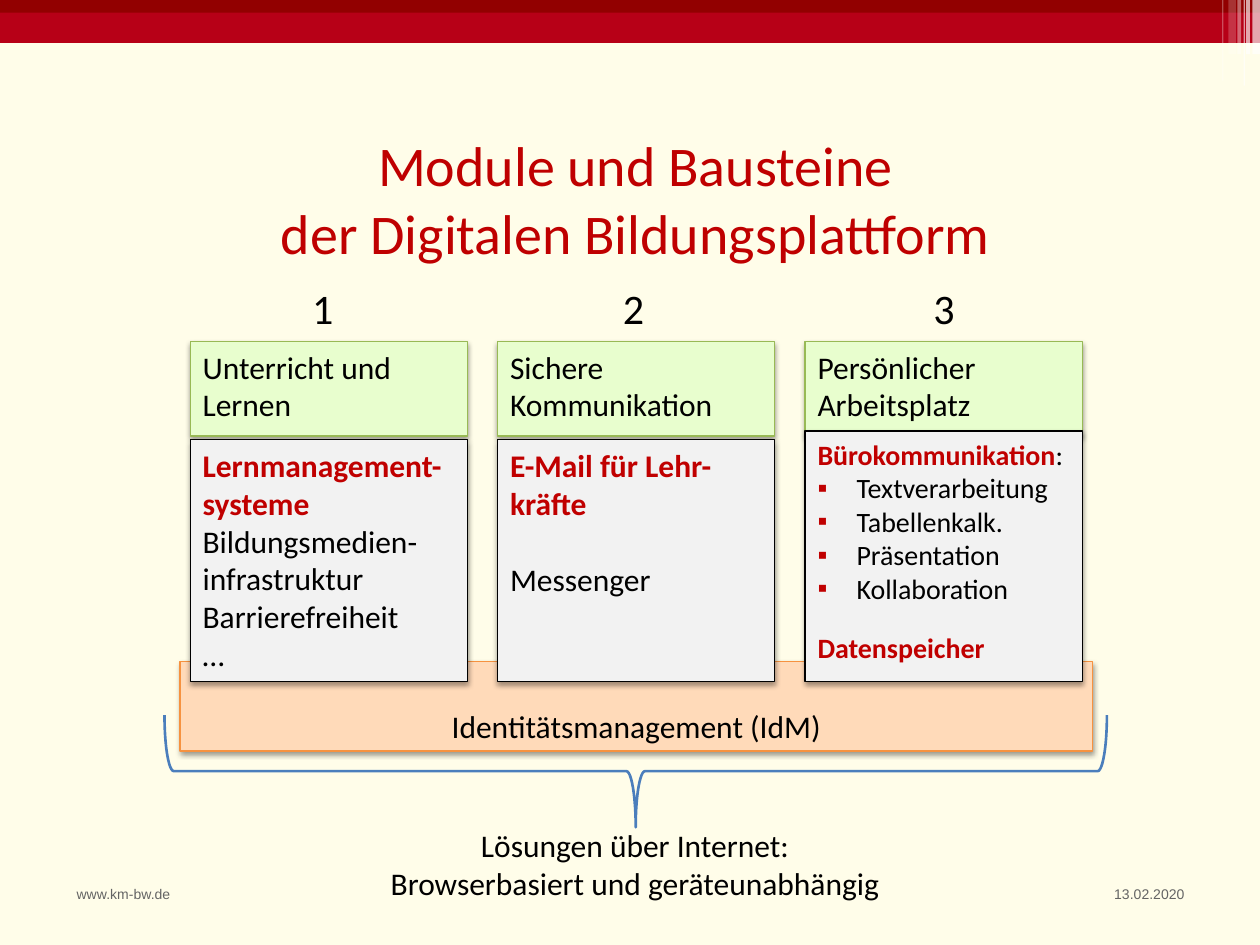
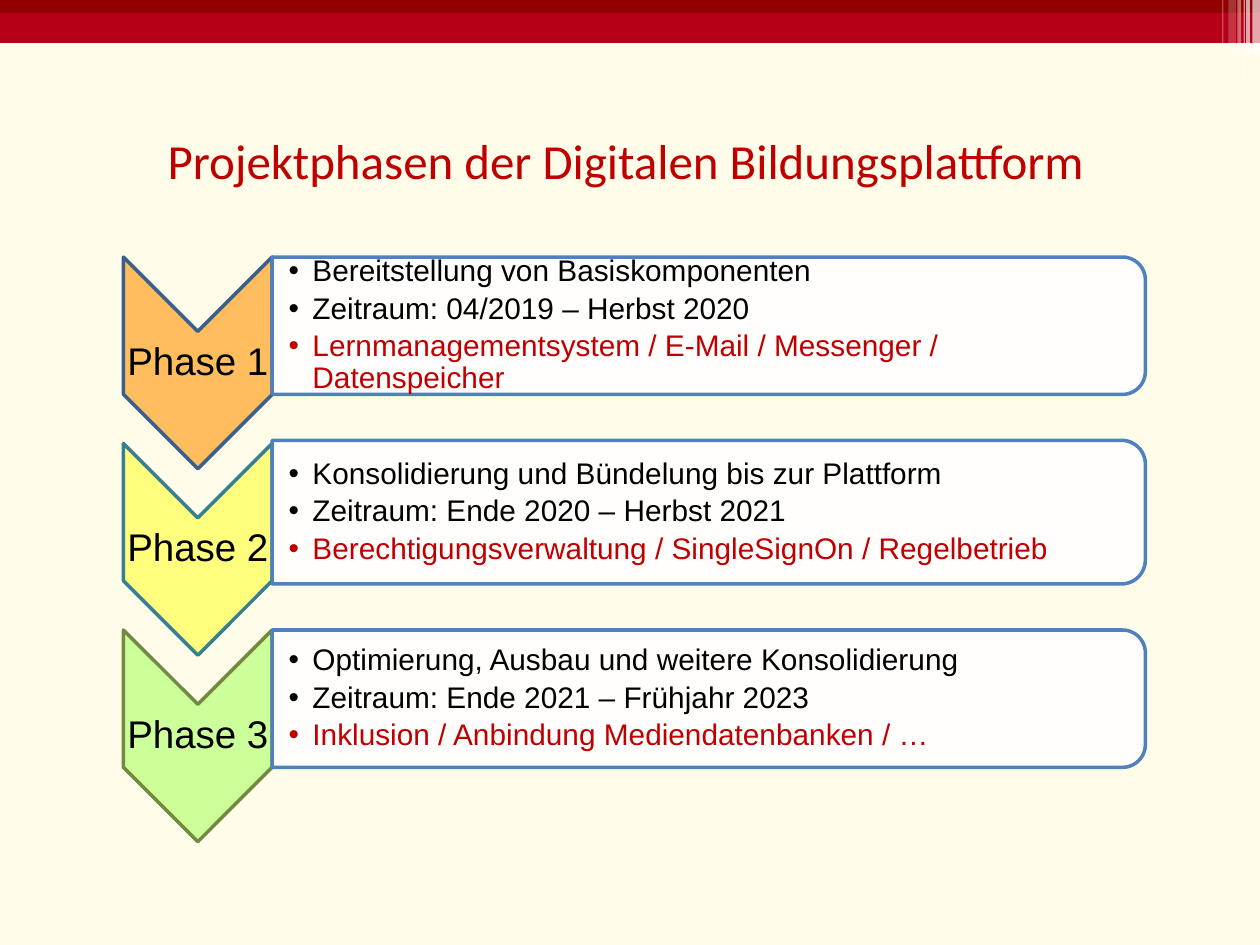
from lxml import etree
from pptx import Presentation
from pptx.dml.color import RGBColor
from pptx.enum.shapes import MSO_SHAPE
from pptx.enum.text import MSO_ANCHOR, PP_ALIGN
from pptx.oxml.ns import qn
from pptx.util import Inches, Pt

RECTANGLE = MSO_SHAPE.RECTANGLE
CHEVRON = MSO_SHAPE.CHEVRON
BRACE = MSO_SHAPE.RIGHT_BRACE
ROUNDED = MSO_SHAPE.ROUND_2_SAME_RECTANGLE
TOP, MIDDLE, BOTTOM = MSO_ANCHOR.TOP, MSO_ANCHOR.MIDDLE, MSO_ANCHOR.BOTTOM
LEFT, CENTER, RIGHT = PP_ALIGN.LEFT, PP_ALIGN.CENTER, PP_ALIGN.RIGHT

COLORS = {
    "background": "FFFDE9", "band": "B70017", "band_dark": "920000",
    "white": "FFFFFF", "black": "000000", "title": "BF0000", "accent": "C00000",
    "footer": "646464", "identity": "FFDAB9", "identity_line": "F69240",
    "header": "E8FECE", "header_line": "98B955", "module": "F2F2F2",
    "brace": "4B7EBC", "panel_line": "4F81BD",
    "phase1": "FFBD5D", "phase1_line": "3A5F8C",
    "phase2": "FFFF7D", "phase2_line": "377F92",
    "phase3": "CCFF99", "phase3_line": "738A42",
}
FONTS = {
    "title": {"name": "Calibri", "size": Pt(32), "color": "title"},
    "title_small": {"name": "Calibri", "size": Pt(28), "color": "title"},
    "footer": {"name": "Arial", "size": Pt(8), "color": "footer"},
    "number": {"name": "Calibri", "size": Pt(24), "color": "black"},
    "body": {"name": "Calibri", "size": Pt(18), "color": "black"},
    "key": {"name": "Calibri", "size": Pt(18), "color": "accent", "bold": True},
    "small": {"name": "Calibri", "size": Pt(16), "color": "black"},
    "small_key": {"name": "Calibri", "size": Pt(16), "color": "accent", "bold": True},
    "phase": {"name": "Arial", "size": Pt(22), "color": "black"},
    "detail": {"name": "Arial", "size": Pt(17), "color": "black"},
    "result": {"name": "Arial", "size": Pt(17), "color": "accent"},
}


def add_block(slide, kind, box, fill=None, line=None, width=0.75, opacity=100,
              rotation=0, shadow=False):
    box = [Inches(value) for value in box]
    if kind is None:
        return slide.shapes.add_textbox(*box)
    shape = slide.shapes.add_shape(kind, *box)
    shape.rotation = rotation
    shape.shadow.inherit = False
    properties = shape.element.spPr
    if fill:
        shape.fill.solid()
        shape.fill.fore_color.rgb = RGBColor.from_string(COLORS[fill])
        if opacity < 100:
            color = properties.find(qn("a:solidFill"))[0]
            etree.SubElement(color, qn("a:alpha"), val=str(opacity * 1000))
    else:
        shape.fill.background()
    if line:
        shape.line.color.rgb = RGBColor.from_string(COLORS[line])
        shape.line.width = Pt(width)
    else:
        shape.line.fill.background()
    if shadow:
        effect = etree.SubElement(
            properties.find(qn("a:effectLst")), qn("a:outerShdw"),
            blurRad=str(Pt(3.1)), dist=str(Pt(1.6)), dir="5400000", rotWithShape="0")
        color = etree.SubElement(effect, qn("a:srgbClr"), val=COLORS["black"])
        etree.SubElement(color, qn("a:alpha"), val="38000")
    return shape


def write_text(shape, paragraphs, align=LEFT, anchor=TOP, wrap=True, insets=None,
               bullet=None, indent=0, **spacing):
    frame = shape.text_frame
    frame.word_wrap = wrap
    frame.vertical_anchor = anchor
    for side, inset in zip(("left", "top", "right", "bottom"), insets or ()):
        setattr(frame, f"margin_{side}", Inches(inset))
    for index, (runs, settings) in enumerate(paragraphs):
        paragraph = frame.add_paragraph() if index else frame.paragraphs[0]
        settings = {"alignment": align, **spacing, **settings}
        mark = settings.pop("bullet", bullet)
        if mark:
            properties = paragraph._p.get_or_add_pPr()
            properties.set("marL", str(Inches(indent)))
            properties.set("indent", str(-Inches(indent)))
            color = etree.SubElement(properties, qn("a:buClr"))
            mark_color = settings.pop("bullet_color", FONTS[runs[0][1]]["color"])
            etree.SubElement(color, qn("a:srgbClr"), val=COLORS[mark_color])
            etree.SubElement(properties, qn("a:buFont"), typeface="Arial")
            etree.SubElement(properties, qn("a:buChar"), char=mark)
        for name, value in settings.items():
            setattr(paragraph, name, value)
        for text, style in runs:
            run = paragraph.add_run()
            run.text = text
            for name, value in FONTS[style].items():
                if name == "color":
                    run.font.color.rgb = RGBColor.from_string(COLORS[value])
                else:
                    setattr(run.font, name, value)


presentation = Presentation()
presentation.slide_width = Inches(10)
presentation.slide_height = Inches(7.5)
BANDS = [
    (0, 10, 0.34, "band", 100), (0, 10, 0.1, "band_dark", 100),
    (9.89, 0.03, 0.43, "white", 65), (9.94, 0.06, 0.43, "white", 65),
    (9.7, 0.01, 0.64, "white", 30), (9.87, 0.01, 0.68, "white", 60),
    (9.75, 0.06, 0.43, "white", 20), (9.82, 0.03, 0.43, "white", 40),
]
TITLES = [
    ((2.09, 0.99, 5.91, 1.18), "title",
     ["Module und Bausteine", "der Digitalen Bildungsplattform"]),
    ((1.18, 0.99, 7.57, 0.57), "title_small",
     ["Projektphasen der Digitalen Bildungsplattform"]),
]
for box, style, lines in TITLES:
    slide = presentation.slides.add_slide(presentation.slide_layouts[6])
    slide.background.fill.solid()
    slide.background.fill.fore_color.rgb = RGBColor.from_string(COLORS["background"])
    for left, width, height, fill, opacity in BANDS:
        add_block(slide, RECTANGLE, (left, 0, width, height), fill, opacity=opacity)
    title = add_block(slide, None, box)
    write_text(title, [([(text, style)], {}) for text in lines], CENTER, wrap=False)

modules_slide, phases_slide = presentation.slides

FOOTERS = [((8.52, 6.98, 0.98, 0.39), "13.02.2020", RIGHT),
           ((0.51, 6.98, 2.95, 0.39), "www.km-bw.de", LEFT)]
for box, text, align in FOOTERS:
    footer = add_block(modules_slide, None, box)
    write_text(footer, [([(text, "footer")], {})], align)

identity = add_block(modules_slide, RECTANGLE, (1.43, 5.25, 7.24, 0.71), "identity",
                     "identity_line", shadow=True)
write_text(identity, [([("Identitätsmanagement (IdM)", "body")], {})], CENTER, BOTTOM)
access = add_block(modules_slide, None, (2.93, 6.51, 4.22, 0.71))
write_text(access, [([("Lösungen über Internet:", "body")], {}),
                    ([("Browserbasiert und geräteunabhängig", "body")], {})],
           CENTER, wrap=False)
add_block(modules_slide, BRACE, (4.6, 2.38, 0.89, 7.48), line="brace", width=1.5,
          rotation=90)

APPLICATIONS = ["Textverarbeitung", "Tabellenkalk.", "Präsentation", "Kollaboration"]
MODULES = [
    ("Unterricht und Lernen", 3.49, [
        ([("Lernmanagement-systeme", "key")], {}),
        ([("Bildungsmedien-infrastruktur", "body")], {}),
        ([("Barrierefreiheit", "body")], {}),
        ([("…", "body")], {})]),
    ("Sichere Kommunikation", 3.49, [
        ([("E-Mail für Lehr-kräfte", "key")], {}),
        ([("Messenger", "body")], {"space_before": Pt(22)})]),
    ("Persönlicher Arbeitsplatz", 3.42, [
        ([("Bürokommunikation", "small_key"), (":", "small")], {}),
        *[([(name, "small")], {"bullet": "▪", "bullet_color": "accent"})
          for name in APPLICATIONS],
        ([("Datenspeicher", "small_key")], {"space_before": Pt(14.6)})]),
]
MODULE_BOTTOM = 5.41
for index, (heading, top, contents) in enumerate(MODULES):
    left = 1.51 + 2.44 * index
    header = add_block(modules_slide, RECTANGLE, (left, 2.71, 2.2, 0.75), "header",
                       "header_line", shadow=True)
    write_text(header, [([(heading, "body")], {})])
    module = add_block(modules_slide, RECTANGLE, (left, top, 2.2, MODULE_BOTTOM - top),
                       "module", "black", shadow=True)
    write_text(module, contents, indent=0.31)
    number = add_block(modules_slide, None, (2.38 + 2.465 * index, 2.19, 0.37, 0.5))
    write_text(number, [([(str(index + 1), "number")], {})], wrap=False)

PHASES = [
    (1.09, ["Bereitstellung von Basiskomponenten",
            "Zeitraum: 04/2019 – Herbst 2020",
            "Lernmanagementsystem / E-Mail / Messenger / Datenspeicher"]),
    (1.14, ["Konsolidierung und Bündelung bis zur Plattform",
            "Zeitraum: Ende 2020 – Herbst 2021",
            "Berechtigungsverwaltung / SingleSignOn / Regelbetrieb"]),
    (1.09, ["Optimierung, Ausbau und weitere Konsolidierung",
            "Zeitraum: Ende 2021 – Frühjahr 2023",
            "Inklusion / Anbindung Mediendatenbanken / …"]),
]
PANEL_LEFT, PANEL_LENGTH, PHASE_STEP = 2.16, 6.93, 1.48
for index, (height, details) in enumerate(PHASES):
    offset = PHASE_STEP * index
    center = 2.585 + offset
    phase = f"phase{index + 1}"
    add_block(phases_slide, CHEVRON, (0.73, 2.29 + offset, 1.68, 1.18), phase,
              f"{phase}_line", 2, rotation=90)
    label = add_block(phases_slide, None, (0.98, 2.63 + offset, 1.18, 0.5))
    write_text(label, [([(f"Phase {index + 1}", "phase")], {})], CENTER, MIDDLE,
               insets=[0.02] * 4, line_spacing=0.9)
    add_block(phases_slide, ROUNDED,
              (PANEL_LEFT + (PANEL_LENGTH - height) / 2, center - PANEL_LENGTH / 2,
               height, PANEL_LENGTH),
              "white", "panel_line", 2, opacity=90, rotation=90)
    panel_text = add_block(phases_slide, None,
                           (PANEL_LEFT, center - height / 2 + 0.05, 6.88, height - 0.1))
    styles = ["detail", "detail", "result"]
    write_text(panel_text,
               [([(text, style)], {}) for text, style in zip(details, styles)],
               anchor=MIDDLE, insets=[0.13, 0.01, 0.01, 0.01], bullet="•", indent=0.19,
               line_spacing=0.9, space_after=Pt(3))

presentation.save("out.pptx")
